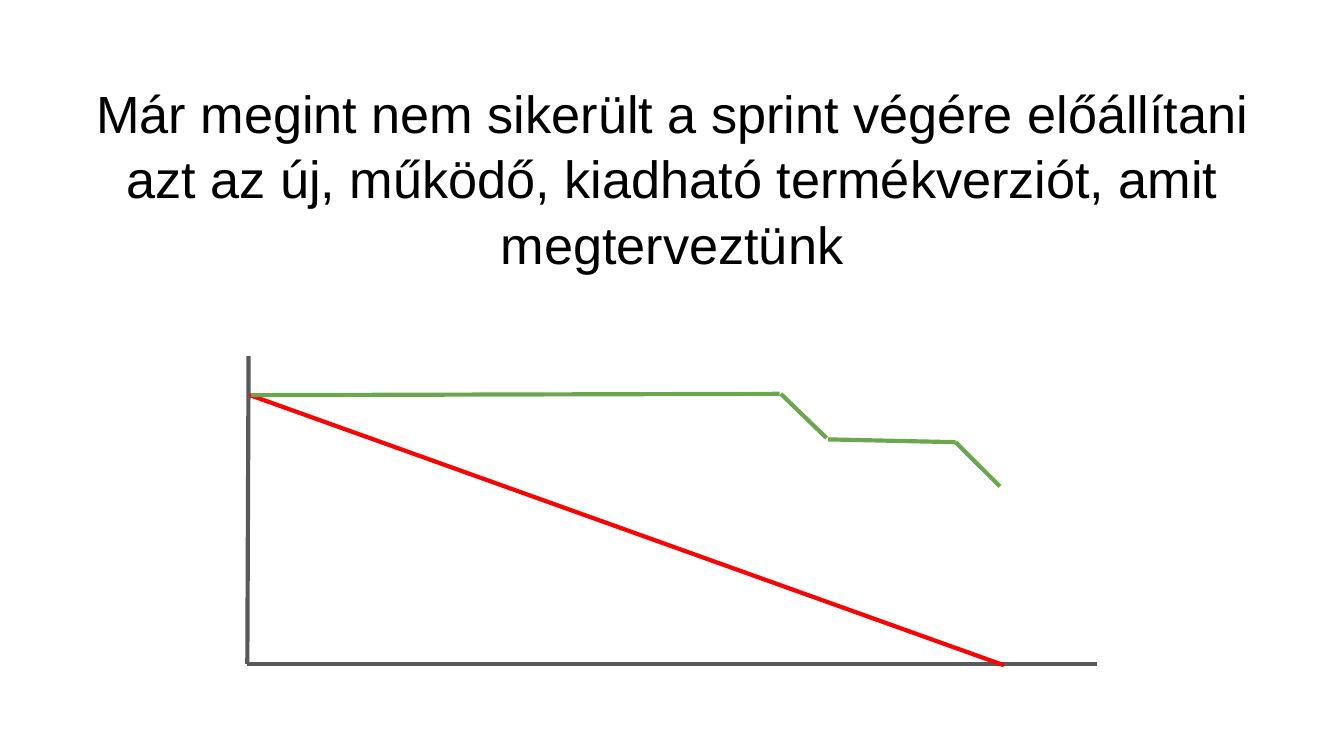
from typing import NamedTuple

from pptx import Presentation
from pptx.dml.color import RGBColor
from pptx.enum import shapes, text
from pptx.oxml import ns
from pptx.oxml.xmlchemy import OxmlElement
from pptx.util import Pt

AXIS, IDEAL, ACTUAL = "595959", "FF0000", "6AA84F"
ORIGIN = (132.5, 355.7)


class Line(NamedTuple):
    start: tuple[float, float]
    end: tuple[float, float]
    color: str


BURNDOWN = [
    Line((133.2, 190.8), ORIGIN, AXIS),
    Line((587.5, 355.7), ORIGIN, AXIS),
    Line((133.9, 211.7), (537.8, 356.4), IDEAL),
    Line((134.6, 211.7), (417.6, 211), ACTUAL),
    Line((418.3, 211), (442.8, 234.7), ACTUAL),
    Line((511.9, 236.9), (443.5, 235.4), ACTUAL),
    Line((511.9, 236.9), (535.7, 260.6), ACTUAL),
]


def rgb(color: str) -> RGBColor:
    return RGBColor.from_string(color)


def draw_title(s, title: str) -> None:
    box = s.shapes.add_textbox(Pt(24.5), Pt(35.3), Pt(671), Pt(118.8))
    tf = box.text_frame
    tf.word_wrap = True
    tf.vertical_anchor = text.MSO_ANCHOR.MIDDLE
    tf.margin_left = tf.margin_right = tf.margin_top = tf.margin_bottom = Pt(7.2)
    tf.text = title
    p = tf.paragraphs[0]
    p.alignment = text.PP_ALIGN.CENTER
    p.line_spacing = 1.04
    font = p.runs[0].font
    font.name, font.size = "Arial", Pt(28)
    font.color.rgb = rgb("000000")


def draw_line(s, line: Line) -> None:
    c = s.shapes.add_connector(
        shapes.MSO_CONNECTOR.STRAIGHT, *map(Pt, line.start + line.end)
    )
    c.line.color.rgb = rgb(line.color)
    c.line.width = Pt(2.25)
    c._element.find(ns.qn("p:spPr")).append(OxmlElement("a:effectLst"))


def main() -> None:
    prs = Presentation()
    prs.slide_width, prs.slide_height = Pt(720), Pt(405)
    s = prs.slides.add_slide(prs.slide_layouts[6])
    draw_title(
        s,
        "Már megint nem sikerült a sprint végére előállítani azt az új, "
        "működő, kiadható termékverziót, amit megterveztünk",
    )
    for line in BURNDOWN:
        draw_line(s, line)
    prs.save("out.pptx")


if __name__ == "__main__":
    main()
